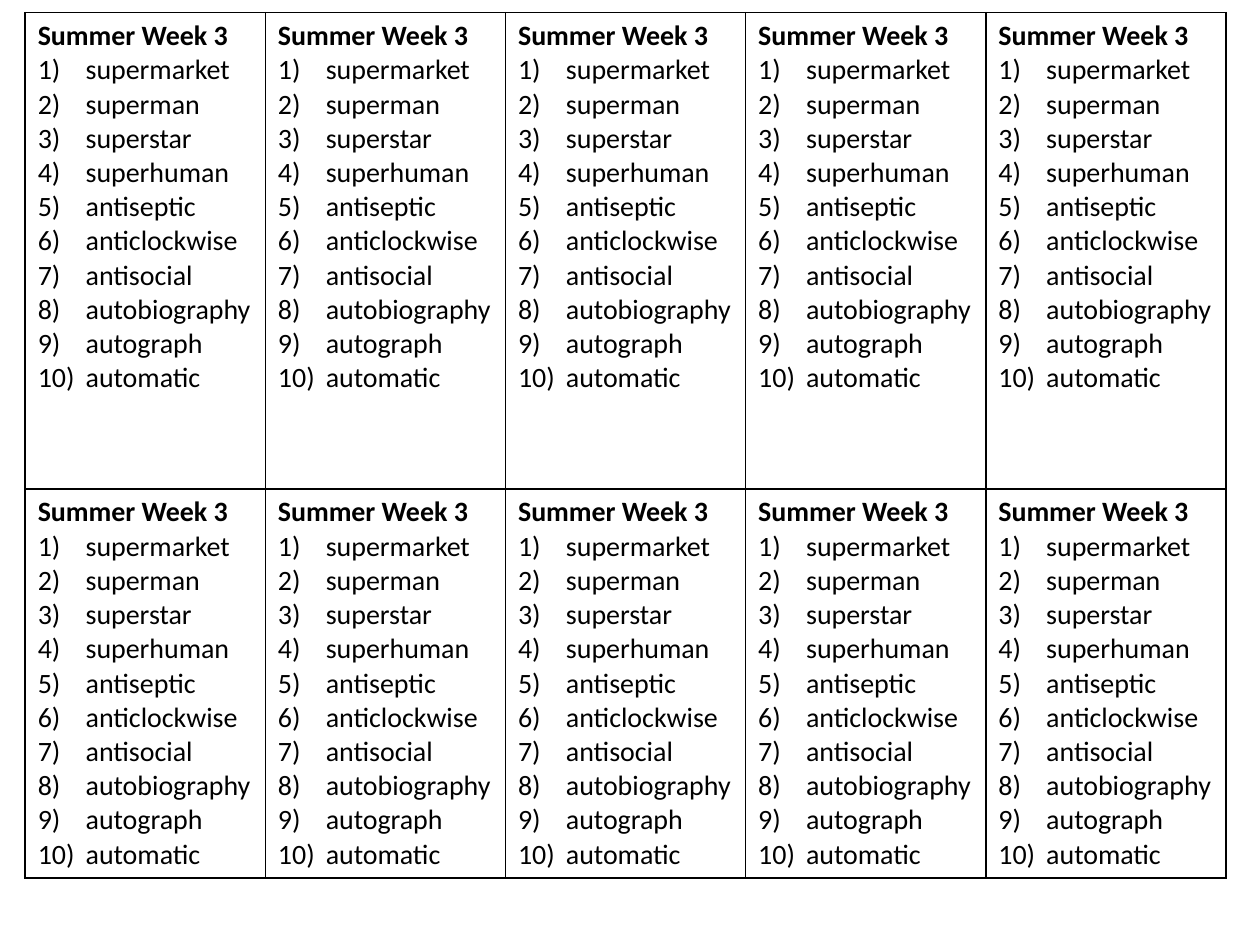
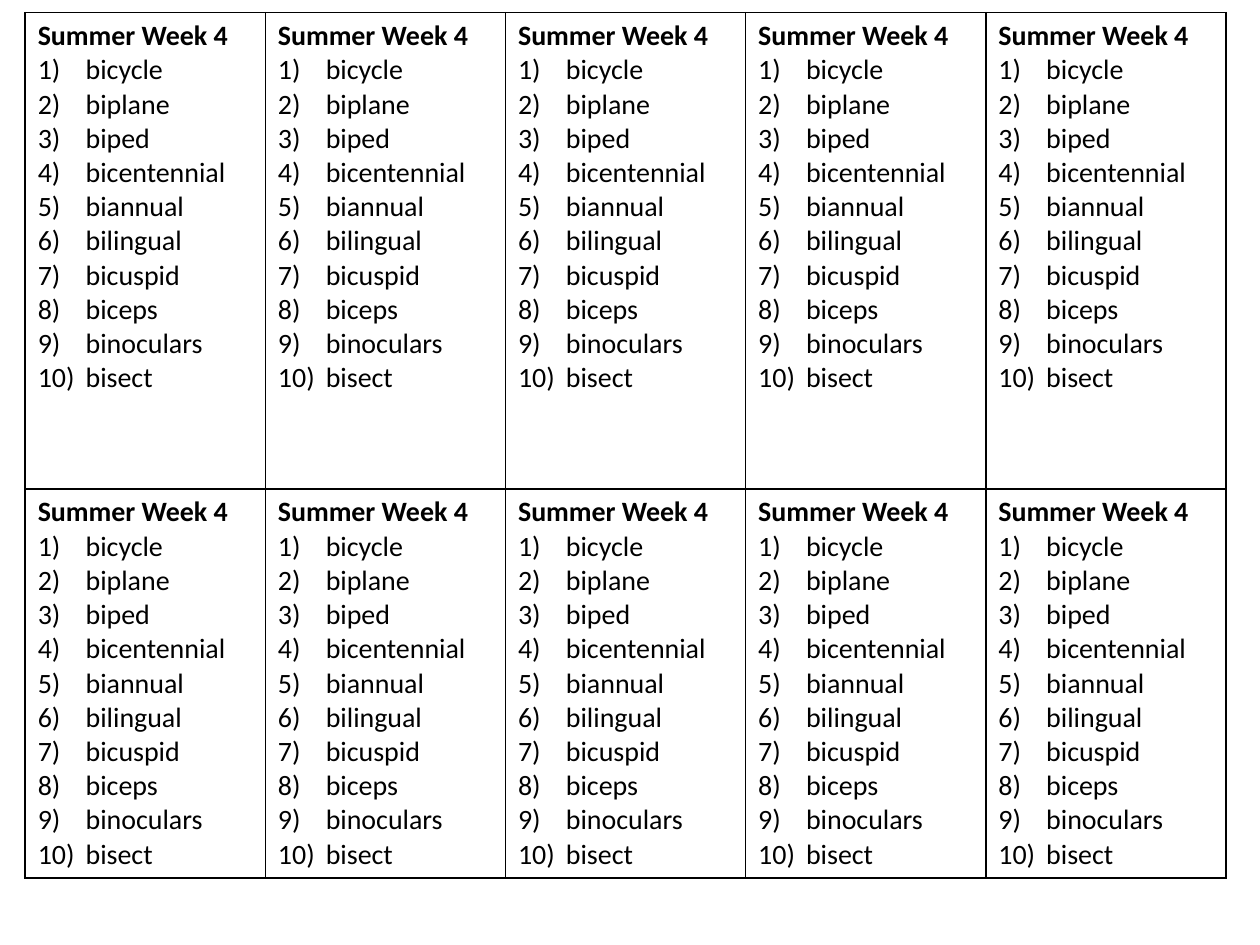
import pptx
import pptx.util
import pptx.dml.color
import pptx.oxml.ns
from lxml import etree

WEEKS = {
    "Summer Week 3": [
        "supermarket", "superman", "superstar", "superhuman", "antiseptic",
        "anticlockwise", "antisocial", "autobiography", "autograph", "automatic",
    ],
    "Summer Week 4": [
        "bicycle", "biplane", "biped", "bicentennial", "biannual",
        "bilingual", "bicuspid", "biceps", "binoculars", "bisect",
    ],
}
COPIES = 5
ROWS = [37.8, 30.3]
WIDTH = 95.3


def paint(code):
    return pptx.dml.color.RGBColor.from_string(code)


def node(parent, tag, **values):
    return etree.SubElement(parent, pptx.oxml.ns.qn(tag), values)


class Sheet:
    ink = "000000"
    font = {"name": "Calibri", "size": pptx.util.Pt(16)}
    line = pptx.util.Pt(1)
    indent = 3.8

    def __init__(self):
        self.deck = pptx.Presentation()
        self.deck.slide_width = pptx.util.Inches(10)
        self.deck.slide_height = pptx.util.Inches(7.5)
        self.slide = None

    def grid(self, count):
        return round(self.deck.slide_width * count / 100)

    def page(self):
        blank = self.deck.slide_layouts.get_by_name("Blank")
        self.slide = self.deck.slides.add_slide(blank)

    def text(self, para, words, bold=False):
        run = para.add_run()
        run.text = words
        for key, value in {**self.font, "bold": bold}.items():
            setattr(run.font, key, value)
        run.font.color.rgb = paint(self.ink)

    def item(self, frame, word):
        para = frame.add_paragraph()
        props = para._p.get_or_add_pPr()
        step = self.grid(self.indent)
        for key, value in {"marL": step, "indent": -step}.items():
            props.set(key, str(value))
        node(props, "a:buFont", typeface="+mj-lt")
        node(props, "a:buAutoNum", type="arabicParenR")
        self.text(para, word)

    def border(self, cell):
        props = cell._tc.get_or_add_tcPr()
        for place, side in enumerate("LRTB"):
            edge = node(props, f"a:ln{side}", w=str(self.line))
            node(node(edge, "a:solidFill"), "a:srgbClr", val=self.ink)
            props.insert(place, edge)

    def card(self, cell, title, words):
        cell.fill.background()
        self.border(cell)
        self.text(cell.text_frame.paragraphs[0], title, bold=True)
        for word in words:
            self.item(cell.text_frame, word)

    def table(self, left, top, title, words):
        box = map(self.grid, (left, top, WIDTH, sum(ROWS)))
        table = self.slide.shapes.add_table(len(ROWS), COPIES, *box).table
        table.first_row = table.horz_banding = False
        for column in table.columns:
            column.width = self.grid(WIDTH / COPIES)
        for row, height in zip(table.rows, ROWS):
            row.height = self.grid(height)
        for cell in table.iter_cells():
            self.card(cell, title, words)


def main():
    sheet = Sheet()
    for title, words in WEEKS.items():
        sheet.page()
        sheet.table(2, 1, title, words)
    sheet.deck.save("out.pptx")


if __name__ == "__main__":
    main()
